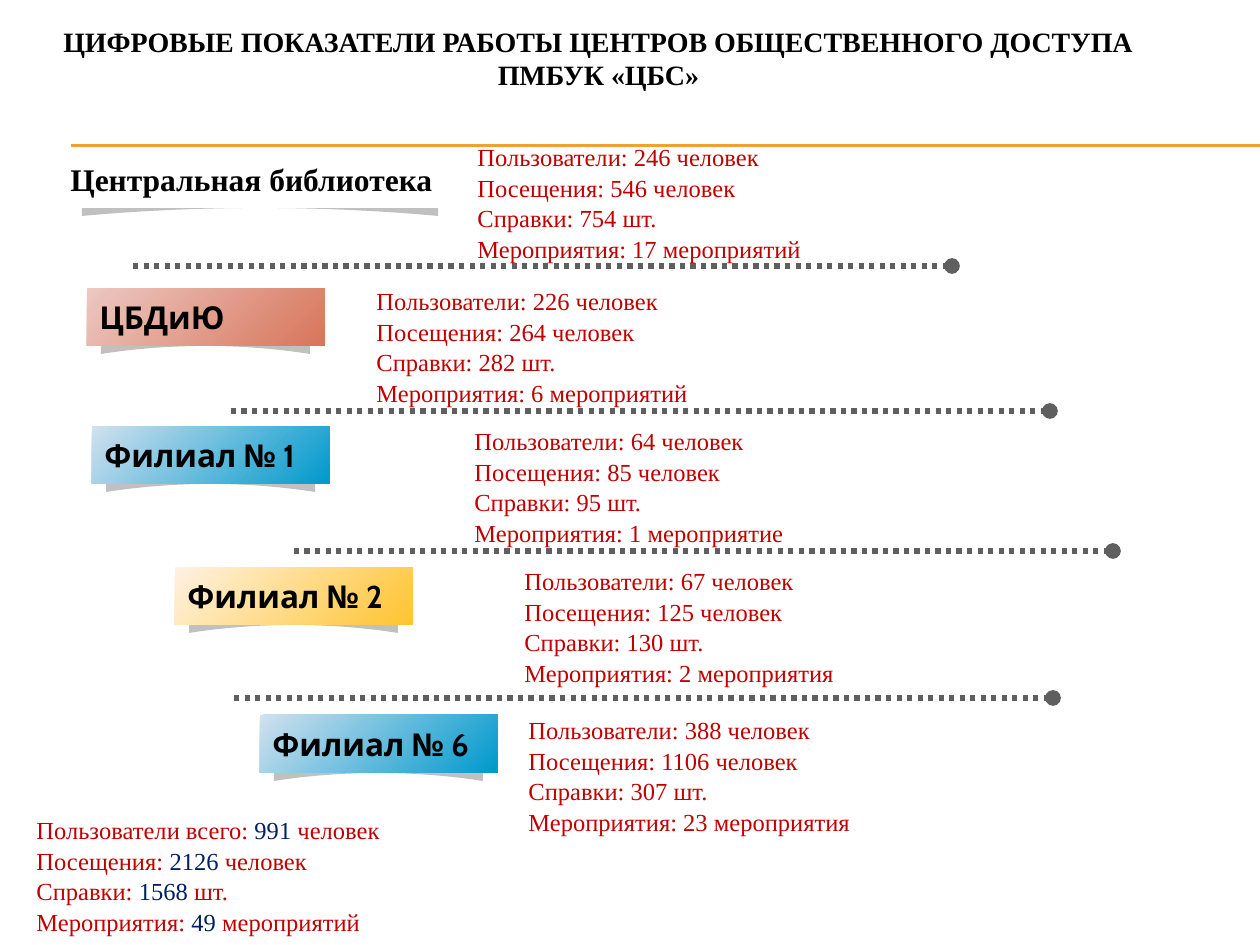
import pptx
import pptx.dml.color
import pptx.enum.dml
import pptx.enum.shapes
import pptx.enum.text
import pptx.oxml.ns
import pptx.util
from lxml import etree

RGBColor = pptx.dml.color.RGBColor
BLACK = RGBColor(0x00, 0x00, 0x00)
WHITE = RGBColor(0xFF, 0xFF, 0xFF)
RED = RGBColor(0xC0, 0x00, 0x00)
NAVY = RGBColor(0x00, 0x20, 0x60)
ORANGE = RGBColor(0xF0, 0xA2, 0x2E)
GRAY = RGBColor(0x5F, 0x5F, 0x5F)
SHADOW = RGBColor(0xC0, 0xC0, 0xC0)
CORAL_GRADIENT = (RGBColor(0xEC, 0xC8, 0xC2), RGBColor(0xD8, 0x75, 0x5A))
BLUE_GRADIENT = (RGBColor(0xD1, 0xE1, 0xEE), RGBColor(0x00, 0x99, 0xCC))
YELLOW_GRADIENT = (RGBColor(0xFF, 0xF2, 0xE3), RGBColor(0xFF, 0xC4, 0x2F))

SERIF = "Times New Roman"
SANS = "Cabin"
SCALE = 914400 / 126

TITLE = "ЦИФРОВЫЕ ПОКАЗАТЕЛИ РАБОТЫ ЦЕНТРОВ ОБЩЕСТВЕННОГО ДОСТУПА ПМБУК «ЦБС»"
LABELS = ("Пользователи", "Посещения", "Справки", "Мероприятия")
UNITS = ("человек", "человек", "шт.")

BRANCHES = [
    dict(name="Центральная библиотека", font=SERIF, fill=None, banner=(58, 150, 403),
         shadow=(82, 356), figures=(465, 135), values=(246, 546, 754, 17), events="мероприятий"),
    dict(name="ЦБДиЮ", font=SANS, fill=CORAL_GRADIENT, banner=(87, 288, 238),
         shadow=(101, 209), figures=(364, 279), values=(226, 264, 282, 6), events="мероприятий"),
    dict(name="Филиал № 1", font=SANS, fill=BLUE_GRADIENT, banner=(92, 426, 238),
         shadow=(106, 209), figures=(462, 419), values=(64, 85, 95, 1), events="мероприятие"),
    dict(name="Филиал № 2", font=SANS, fill=YELLOW_GRADIENT, banner=(175, 567, 238),
         shadow=(189, 209), figures=(512, 559), values=(67, 125, 130, 2), events="мероприятия"),
    dict(name="Филиал № 6", font=SANS, fill=BLUE_GRADIENT, banner=(260, 715, 238),
         shadow=(274, 209), figures=(516, 708), values=(388, 1106, 307, 23), events="мероприятия"),
]
TOTAL = dict(figures=(24, 808), values=(991, 2126, 1568, 49), events="мероприятий")
DOTTED_LINES = [(133, 266), (231, 411), (294, 551), (234, 698)]
DOTTED_LENGTH = 819
BANNER_HEIGHT = 58
ARC_STEPS = 20


def px(length):
    return pptx.util.Emu(round(length * SCALE))


def set_font(paragraph, name, size, color, bold=False):
    paragraph.font.name = name
    paragraph.font.size = pptx.util.Pt(size)
    paragraph.font.color.rgb = color
    paragraph.font.bold = bold


def add_line(slide, left, top, right, color, width):
    line = slide.shapes.add_connector(
        pptx.enum.shapes.MSO_CONNECTOR.STRAIGHT, px(left), px(top), px(right), px(top))
    line.line.color.rgb = color
    line.line.width = pptx.util.Pt(width)
    etree.SubElement(line._element.spPr, pptx.oxml.ns.qn("a:effectLst"))
    return line


def add_dotted_line(slide, left, top):
    line = add_line(slide, left, top, left + DOTTED_LENGTH, GRAY, 3)
    line.line.dash_style = pptx.enum.dml.MSO_LINE.ROUND_DOT
    outline = line.line._get_or_add_ln()
    etree.SubElement(outline, pptx.oxml.ns.qn("a:tailEnd"), type="oval")


def add_banner_shadow(group, left, top, width):
    points = [(0, 6), (width / 2, 0), (width, 6), (width, 28)]
    for step in range(1, ARC_STEPS + 1):
        position = 1 - step / ARC_STEPS
        points.append((width * position, 20 + 8 * (2 * position - 1) ** 2))
    corners = [(px(left + x), px(top + y)) for x, y in points]
    builder = group.shapes.build_freeform(*corners[0], scale=1.0)
    builder.add_line_segments(corners[1:], close=True)
    shape = builder.convert_to_shape()
    shape.shadow.inherit = False
    shape.fill.solid()
    shape.fill.fore_color.rgb = SHADOW
    shape.line.fill.background()


def add_banner(slide, branch):
    left, top, width = branch["banner"]
    shadow_left, shadow_width = branch["shadow"]
    group = slide.shapes.add_group_shape()
    add_banner_shadow(group, shadow_left, top + 38, shadow_width)
    banner = group.shapes.add_shape(
        pptx.enum.shapes.MSO_SHAPE.RECTANGLE, px(left), px(top), px(width), px(BANNER_HEIGHT))
    banner.shadow.inherit = False
    banner.line.fill.background()
    if branch["fill"]:
        banner.fill.gradient()
        banner.fill.gradient_angle = 315
        for stop, color in zip(banner.fill.gradient_stops, branch["fill"]):
            stop.color.rgb = color
    else:
        banner.fill.solid()
        banner.fill.fore_color.rgb = WHITE
    frame = banner.text_frame
    frame.word_wrap = True
    frame.vertical_anchor = pptx.enum.text.MSO_ANCHOR.MIDDLE
    paragraph = frame.paragraphs[0]
    paragraph.text = branch["name"]
    paragraph.alignment = pptx.enum.text.PP_ALIGN.LEFT
    set_font(paragraph, branch["font"], 18, BLACK, bold=True)


def add_figures(slide, entry, suffix="", value_color=None):
    left, top = entry["figures"]
    frame = slide.shapes.add_textbox(px(left), px(top), px(601), px(131)).text_frame
    frame.word_wrap = True
    units = UNITS + (entry["events"],)
    for index, (label, value, unit) in enumerate(zip(LABELS, entry["values"], units)):
        paragraph = frame.paragraphs[0] if index == 0 else frame.add_paragraph()
        paragraph.line_spacing = 1.04
        set_font(paragraph, SERIF, 14, RED)
        caption = label + suffix if index == 0 else label
        if value_color is None:
            paragraph.add_run().text = f"{caption}: {value} {unit}"
        else:
            paragraph.add_run().text = f"{caption}: "
            number = paragraph.add_run()
            number.text = f"{value} "
            number.font.color.rgb = value_color
            paragraph.add_run().text = unit


def main():
    presentation = pptx.Presentation()
    presentation.slide_width = px(1260)
    presentation.slide_height = px(945)
    slide = presentation.slides.add_slide(presentation.slide_layouts[5])

    for top in (145, 146):
        add_line(slide, 71, top, 1260, ORANGE, 0.75)

    title = slide.shapes.title
    title.left, title.top, title.width, title.height = px(0), px(0), px(1197), px(116)
    title.text_frame.text = TITLE
    title.text_frame.vertical_anchor = pptx.enum.text.MSO_ANCHOR.MIDDLE
    heading = title.text_frame.paragraphs[0]
    heading.alignment = pptx.enum.text.PP_ALIGN.CENTER
    set_font(heading, SERIF, 16, BLACK, bold=True)

    for branch in BRANCHES:
        add_banner(slide, branch)
    for left, top in DOTTED_LINES:
        add_dotted_line(slide, left, top)
    for branch in BRANCHES:
        add_figures(slide, branch)
    add_figures(slide, TOTAL, suffix=" всего", value_color=NAVY)

    presentation.save("out.pptx")


if __name__ == "__main__":
    main()
